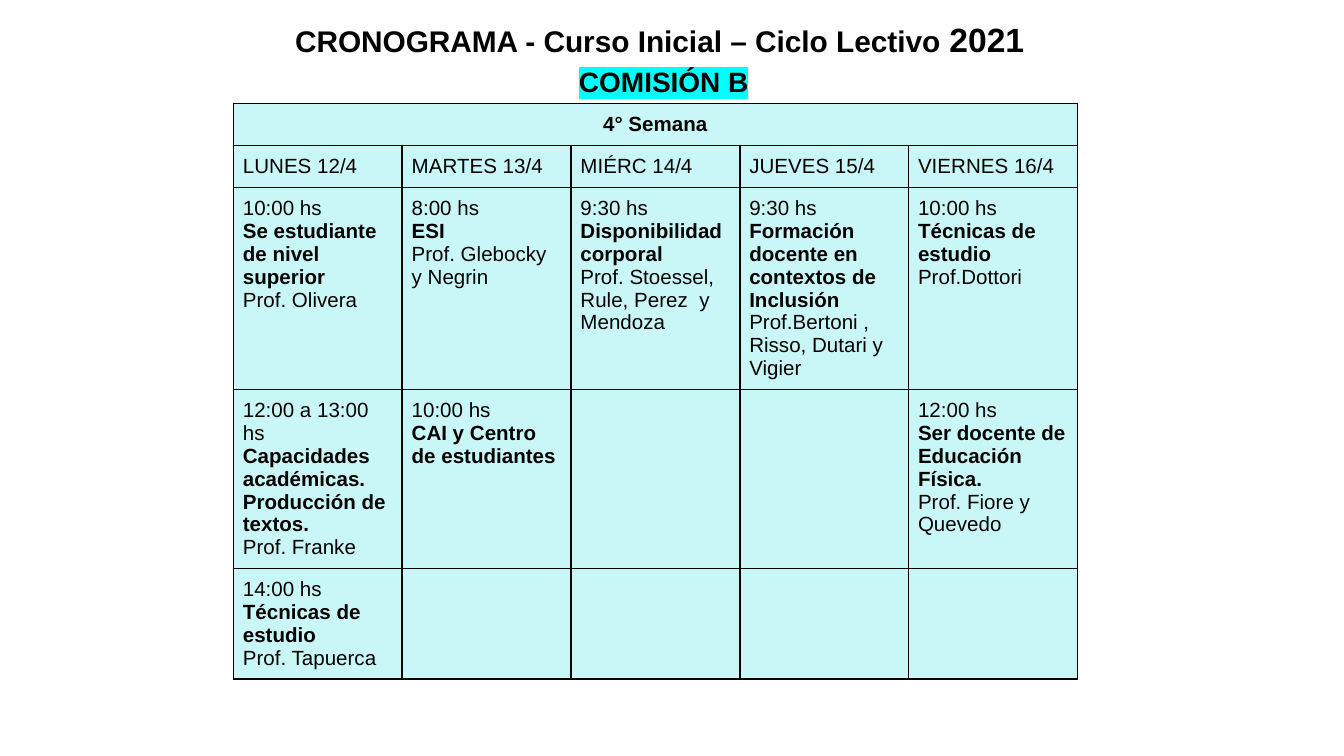
from dataclasses import dataclass

from lxml import etree
from pptx import Presentation
from pptx.dml.color import RGBColor
from pptx.enum.text import MSO_AUTO_SIZE, PP_ALIGN
from pptx.oxml.ns import qn
from pptx.util import Cm, Pt

CENTER = PP_ALIGN.CENTER
LEFT = PP_ALIGN.LEFT
GROW = MSO_AUTO_SIZE.SHAPE_TO_FIT_TEXT


@dataclass(frozen=True)
class Theme:
    font: str = "Arial"
    ink: str = "000000"
    cell: str = "C9F7F7"
    mark: str = "00FFFF"
    title: int = 16
    year: int = 18
    group: int = 15
    body: int = 11
    line: int = 1


THEME = Theme()

WEEK = "4° Semana"
DAYS = ["LUNES 12/4", "MARTES 13/4", "MIÉRC 14/4", "JUEVES 15/4", "VIERNES 16/4"]

# Each class: time, subject (bold), then teachers
PLAN = [
    [
        ("10:00 hs", "Se estudiante de nivel superior", "Prof. Olivera"),
        ("8:00 hs", "ESI", "Prof. Glebocky", "y Negrin"),
        ("9:30 hs", "Disponibilidad corporal",
         "Prof. Stoessel, Rule, Perez  y Mendoza"),
        ("9:30 hs", "Formación docente en contextos de Inclusión",
         "Prof.Bertoni , Risso, Dutari y Vigier"),
        ("10:00 hs", "Técnicas de estudio", "Prof.Dottori"),
    ],
    [
        ("12:00 a 13:00 hs", "Capacidades académicas. Producción de textos.",
         "Prof. Franke"),
        ("10:00 hs", "CAI y Centro de estudiantes"),
        (),
        (),
        ("12:00 hs", "Ser docente de Educación Física.", "Prof. Fiore y Quevedo"),
    ],
    [
        ("14:00 hs", "Técnicas de estudio", "Prof. Tapuerca"),
        (), (), (), (),
    ],
]

COL = 3.19
ROWS = [0.78, 0.78, 3.81, 3.37, 2.08]


def add_run(para, text, size, bold=False, mark=None):
    run = para.add_run()
    run.text = text
    font = run.font
    font.size = Pt(size)
    font.bold = bold
    font.color.rgb = RGBColor.from_string(THEME.ink)
    font.name = THEME.font
    if mark:
        # The highlight follows the text fill
        light = etree.Element(qn("a:highlight"))
        etree.SubElement(light, qn("a:srgbClr"), val=mark)
        font._element.find(qn("a:solidFill")).addnext(light)


def pad(box, gap):
    box.margin_left = box.margin_right = Cm(gap)
    box.margin_top = box.margin_bottom = Cm(gap)


def add_edges(cell):
    props = cell._tc.get_or_add_tcPr()
    for side in ("lnL", "lnR", "lnT", "lnB"):
        edge = etree.SubElement(props, qn(f"a:{side}"), w=str(Pt(THEME.line)))
        fill = etree.SubElement(edge, qn("a:solidFill"))
        etree.SubElement(fill, qn("a:srgbClr"), val=THEME.ink)


def style_cell(cell):
    pad(cell, 0.18)
    add_edges(cell)
    cell.fill.solid()
    cell.fill.fore_color.rgb = RGBColor.from_string(THEME.cell)


def fill_cell(cell, lines, bold_at=None, align=LEFT):
    frame = cell.text_frame
    for i, line in enumerate(lines):
        para = frame.add_paragraph() if i else frame.paragraphs[0]
        para.alignment = align
        add_run(para, line, THEME.body, i == bold_at)


def add_plan(slide):
    frame = slide.shapes.add_table(
        len(ROWS), len(DAYS), Cm(4.41), Cm(1.96),
        Cm(COL * len(DAYS)), Cm(sum(ROWS)))
    table = frame.table
    for col in table.columns:
        col.width = Cm(COL)
    for row, high in zip(table.rows, ROWS):
        row.height = Cm(high)
    for cell in table.iter_cells():
        style_cell(cell)

    # Week and day heads
    table.cell(0, 0).merge(table.cell(0, len(DAYS) - 1))
    fill_cell(table.cell(0, 0), [WEEK], 0, CENTER)
    for c, day in enumerate(DAYS):
        fill_cell(table.cell(1, c), [day])

    # Classes
    for r, row in enumerate(PLAN, 2):
        for c, lines in enumerate(row):
            fill_cell(table.cell(r, c), lines, 1)


def add_title(slide):
    box = slide.shapes.add_textbox(Cm(4.39), Cm(0), Cm(16.31), Cm(2.13))
    frame = box.text_frame
    frame.word_wrap = True
    frame.auto_size = GROW
    pad(frame, 0.25)
    head, group = frame.paragraphs[0], frame.add_paragraph()
    for para in (head, group):
        para.alignment = CENTER
        para.line_spacing = 1.15
    add_run(head, "CRONOGRAMA - Curso Inicial – Ciclo Lectivo ", THEME.title, True)
    add_run(head, "2021", THEME.year, True)
    add_run(head, " ", THEME.title)
    add_run(group, "COMISIÓN B", THEME.group, True, THEME.mark)


def main():
    deck = Presentation()
    deck.slide_width, deck.slide_height = Cm(25.4), Cm(14.29)
    slide = deck.slides.add_slide(deck.slide_layouts[6])
    add_plan(slide)
    add_title(slide)
    deck.save("out.pptx")


if __name__ == "__main__":
    main()
